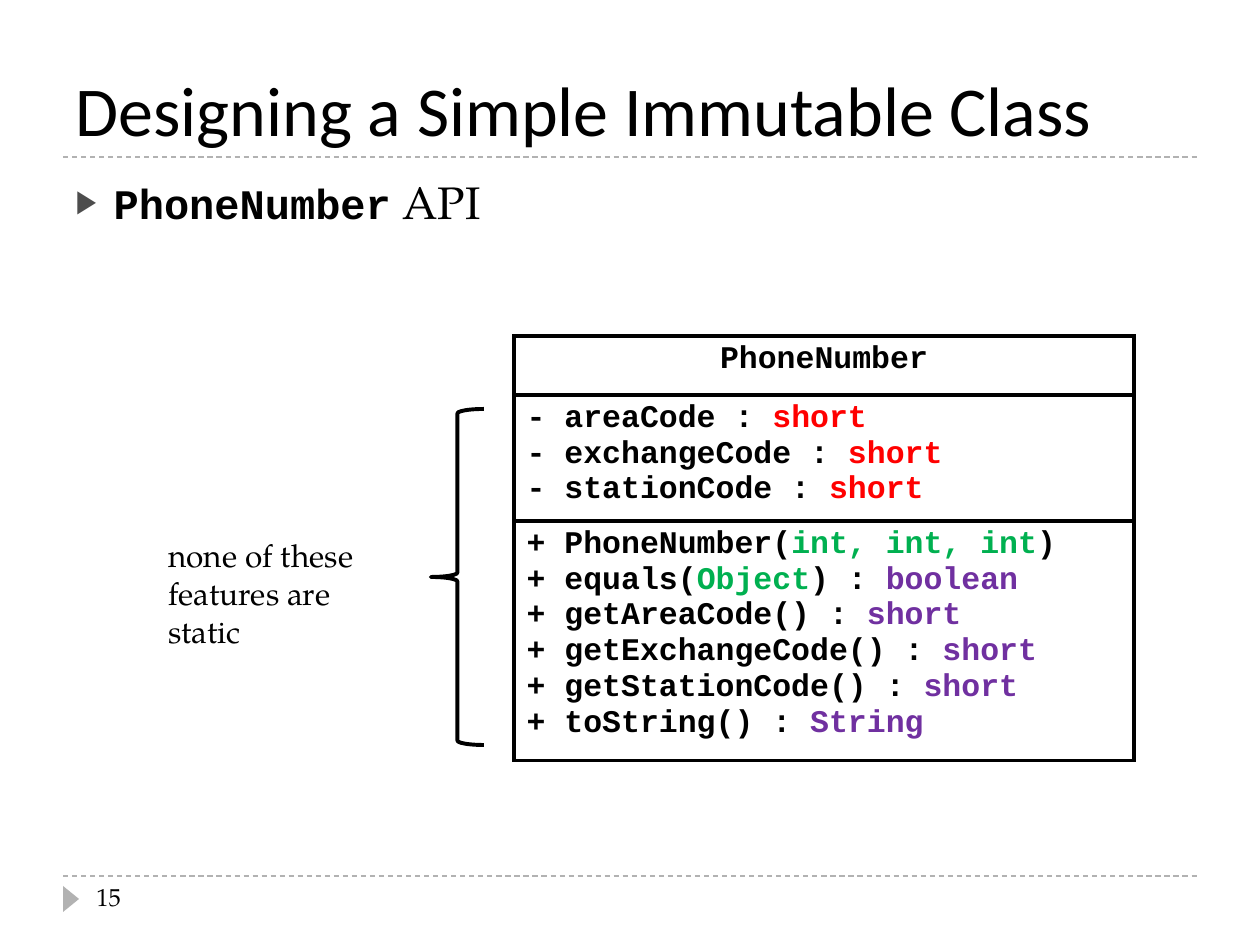
from lxml import etree
from pptx import Presentation
from pptx.dml.color import RGBColor
from pptx.enum.dml import MSO_LINE
from pptx.enum.shapes import MSO_CONNECTOR, MSO_SHAPE
from pptx.enum.text import MSO_ANCHOR, MSO_AUTO_SIZE, PP_ALIGN
from pptx.oxml import parse_xml
from pptx.oxml.ns import nsdecls, qn
from pptx.util import Pt

STRAIGHT = MSO_CONNECTOR.STRAIGHT
TRIANGLE, LEFT_BRACE = MSO_SHAPE.ISOSCELES_TRIANGLE, MSO_SHAPE.LEFT_BRACE
DASH = MSO_LINE.DASH
LEFT, CENTER = PP_ALIGN.LEFT, PP_ALIGN.CENTER
TOP, BOTTOM = MSO_ANCHOR.TOP, MSO_ANCHOR.BOTTOM
FIXED = MSO_AUTO_SIZE.NONE

PX = 914400 / 126
COLORS = {
    "black": "000000",
    "rule": "B2B2B2",
    "bullet": "4D4D4D",
    "field": "FF0000",
    "argument": "00B050",
    "result": "7030A0",
}
TITLE = {"name": "Calibri", "size": Pt(40), "bold": False}
SERIF = {"name": "TeX Gyre Pagella", "size": Pt(18), "bold": False}
CODE = {"name": "Courier New", "size": Pt(18), "bold": True}

FIELDS = ["areaCode", "exchangeCode", "stationCode"]
METHODS = [
    ("PhoneNumber", "int, int, int", ""),
    ("equals", "Object", "boolean"),
    ("getAreaCode", "", "short"),
    ("getExchangeCode", "", "short"),
    ("getStationCode", "", "short"),
    ("toString", "", "String"),
]


def emu(*lengths):
    return [round(length * PX) for length in lengths]


def rgb(color):
    return RGBColor.from_string(COLORS[color])


def assign(target, values):
    for name, value in values.items():
        setattr(target, name, value)


def method_spans(name, arguments, result):
    spans = [(f"+ {name}(", CODE, "black"), (arguments, CODE, "argument")]
    spans.append((") : " if result else ")", CODE, "black"))
    spans.append((result, CODE, "result"))
    return [span for span in spans if span[0]]


class SlideBuilder:
    """Holds the current slide and draws each kind of element in its style."""

    def __init__(self, deck):
        self.slide = deck.slides.add_slide(deck.slide_layouts[1])
        self.shapes = self.slide.shapes

    def fill_text(self, frame, paragraphs, align=LEFT):
        """Fill a text frame; each paragraph is a list of (text, font, color)."""
        for index, spans in enumerate(paragraphs):
            para = frame.paragraphs[0] if index == 0 else frame.add_paragraph()
            assign(para, {"alignment": align, "space_before": Pt(0)})
            for text, font, color in spans:
                span = para.add_run()
                span.text = text
                assign(span.font, font)
                span.font.color.rgb = rgb(color)

    def place(self, box, bounds, anchor):
        assign(box, dict(zip(("left", "top", "width", "height"), emu(*bounds))))
        assign(box.text_frame, {"word_wrap": True, "auto_size": FIXED,
                                "vertical_anchor": anchor})

    def title(self, bounds, text):
        box = self.shapes.title
        self.place(box, bounds, BOTTOM)
        self.fill_text(box.text_frame, [[(text, TITLE, "black")]])

    def body(self, bounds, spans):
        box = self.slide.placeholders[1]
        self.place(box, bounds, TOP)
        self.fill_text(box.text_frame, [spans])
        para = box.text_frame.paragraphs[0]
        para.space_before = Pt(6)
        properties = para._p.get_or_add_pPr()
        indent = emu(38)[0]
        properties.set("marL", str(indent))
        properties.set("indent", str(-indent))
        color = etree.SubElement(properties, qn("a:buClr"))
        etree.SubElement(color, qn("a:srgbClr"), val=COLORS["bullet"])
        etree.SubElement(properties, qn("a:buSzPct"), val="76000")
        etree.SubElement(properties, qn("a:buChar"), char="▶")

    def text(self, bounds, paragraphs):
        box = self.shapes.add_textbox(*emu(*bounds))
        box.text_frame.word_wrap = True
        self.fill_text(box.text_frame, paragraphs)

    def rule(self, y):
        line = self.shapes.add_connector(STRAIGHT, *emu(63, y, 1197, y))
        assign(line.line, {"width": Pt(0.75), "dash_style": DASH})
        line.line.color.rgb = rgb("rule")
        etree.SubElement(line._element.spPr, qn("a:effectLst"))

    def marker(self, bounds):
        shape = self.shapes.add_shape(TRIANGLE, *emu(*bounds))
        shape.shadow.inherit = False
        shape.rotation = 90
        shape.fill.solid()
        shape.fill.fore_color.rgb = rgb("rule")
        shape.line.fill.background()

    def brace(self, bounds):
        shape = self.shapes.add_shape(LEFT_BRACE, *emu(*bounds))
        shape.shadow.inherit = False
        shape.fill.background()
        shape.line.color.rgb = rgb("black")
        shape.line.width = Pt(2.25)

    def class_table(self, left, top, width, rows):
        """Stack one cell per (height, alignment, paragraphs) row."""
        height = sum(row[0] for row in rows)
        frame = self.shapes.add_table(len(rows), 1, *emu(left, top, width, height))
        table = frame.table
        assign(table, {"first_row": False, "horz_banding": False})
        for index, (row_height, align, paragraphs) in enumerate(rows):
            table.rows[index].height = emu(row_height)[0]
            cell = table.cell(index, 0)
            cell.fill.background()
            self.fill_text(cell.text_frame, paragraphs, align)
            self.border(cell)

    def border(self, cell):
        properties = cell._tc.get_or_add_tcPr()
        for position, side in enumerate("LRTB"):
            properties.insert(position, parse_xml(
                f'<a:ln{side} {nsdecls("a")} w="{Pt(2.25)}"><a:solidFill>'
                f'<a:srgbClr val="{COLORS["black"]}"/></a:solidFill></a:ln{side}>'))


def main():
    deck = Presentation()
    deck.slide_width, deck.slide_height = emu(1260, 945)
    page = SlideBuilder(deck)
    for y in (876, 157):
        page.rule(y)
    page.marker((58, 891, 26, 16))
    page.title((63, 21, 1134, 136), "Designing a Simple Immutable Class")
    page.text((84, 876, 273, 50), [[("15", {**SERIF, "size": Pt(14)}, "black")]])
    page.body((63, 168, 1134, 680), [
        ("PhoneNumber", {**CODE, "size": Pt(24)}, "black"),
        (" API", {**SERIF, "size": Pt(26)}, "black"),
    ])
    fields = [[(f"- {name} : ", CODE, "black"), ("short", CODE, "field")]
              for name in FIELDS]
    page.class_table(514, 336, 620, [
        (59, CENTER, [[("PhoneNumber", CODE, "black")]]),
        (120, LEFT, fields),
        (227, LEFT, [method_spans(*method) for method in METHODS]),
    ])
    page.brace((431, 409, 53, 336))
    page.text((156, 530, 256, 128), [
        [(line, SERIF, "black")] for line in ("none of these", "features are static")
    ])
    deck.save("out.pptx")


if __name__ == "__main__":
    main()
